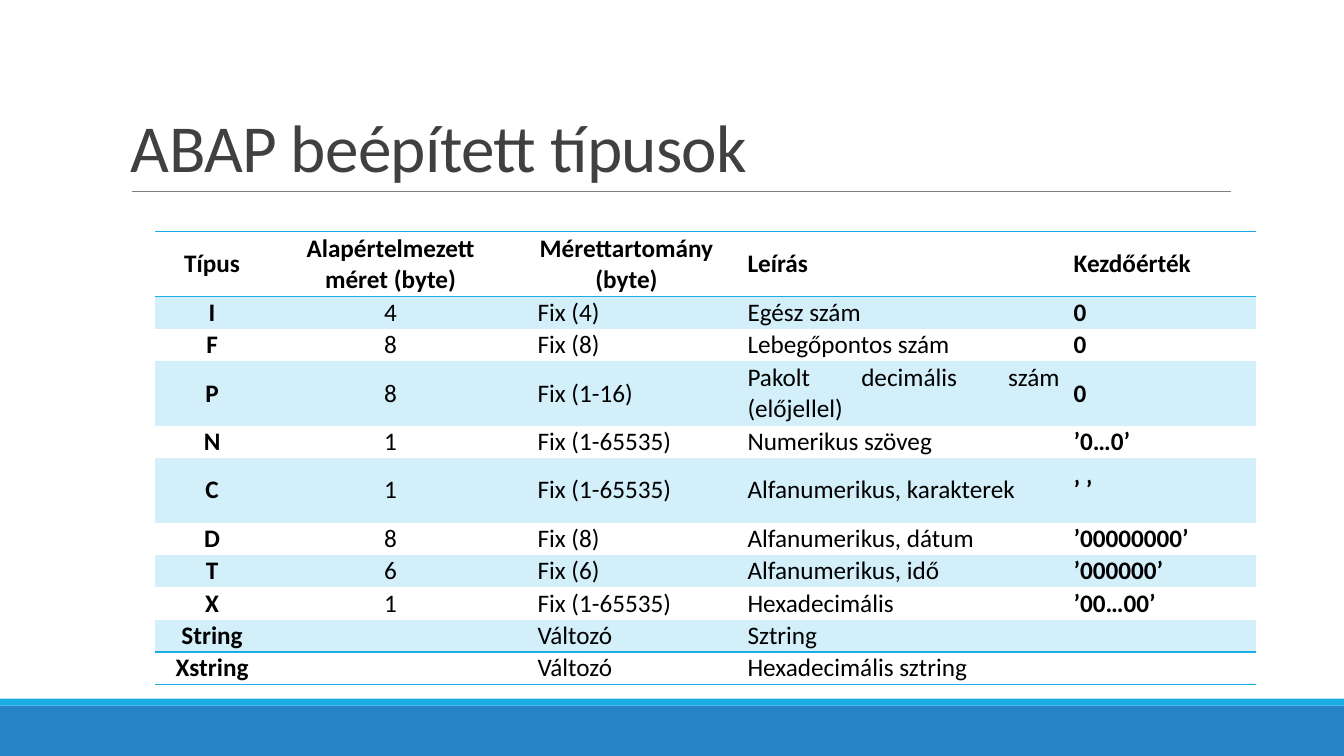
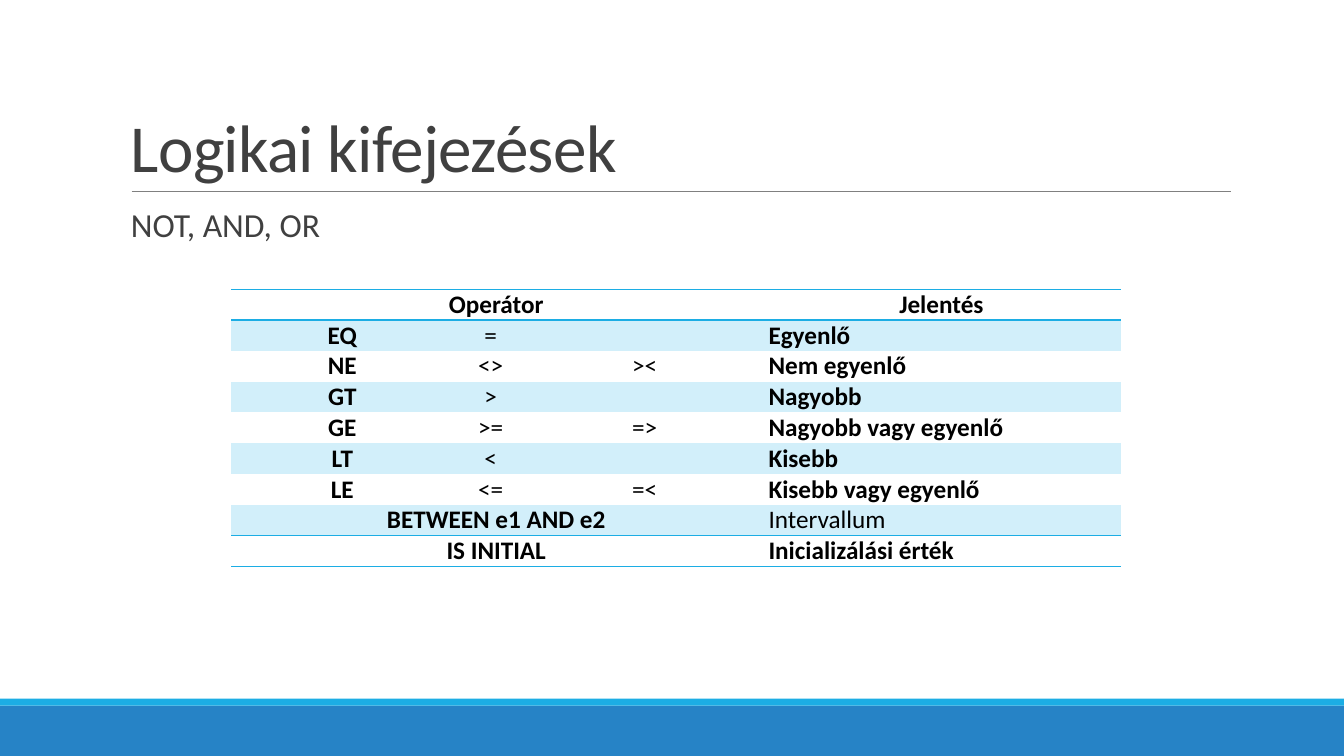
"""Builds two slides on ABAP built-in types and logical expressions."""
from lxml import etree
from pptx import Presentation
from pptx.dml.color import RGBColor
from pptx.enum import shapes, text
from pptx.oxml import ns
from pptx.util import Pt

CYAN = RGBColor(0x1C, 0xAD, 0xE4)
BLUE = RGBColor(0x26, 0x83, 0xC6)
PALE = RGBColor(0xD2, 0xEF, 0xFA)
GRAY = RGBColor(0x80, 0x80, 0x80)
DARK = RGBColor(0x40, 0x40, 0x40)
BLACK = RGBColor(0, 0, 0)
FONT = "Calibri"
WIDTH, HEIGHT = 960, 540
CENTER, JUSTIFY, LEFT = text.PP_ALIGN.CENTER, text.PP_ALIGN.JUSTIFY, text.PP_ALIGN.LEFT

BANDS = [(504, 36, BLUE), (499, 5, CYAN)]

TYPES = {
    "left": 111, "top": 165.6, "unit": 23.1,
    "widths": [81, 174, 163, 233, 135],
    "units": [2, 1, 1, 2, 1, 2, 1, 1, 1, 1, 1],
    "header_aligns": [CENTER, CENTER, CENTER, JUSTIFY, JUSTIFY],
    "columns": [
        {"align": CENTER, "bold": True}, {"align": CENTER}, {"align": LEFT, "indent": 13},
        {"align": JUSTIFY}, {"align": JUSTIFY, "bold": True},
    ],
    "rows": [
        ("Típus", "Alapértelmezett méret (byte)", "Mérettartomány\n(byte)", "Leírás", "Kezdőérték"),
        ("I", "4", "Fix (4)", "Egész szám", "0"),
        ("F", "8", "Fix (8)", "Lebegőpontos szám", "0"),
        ("P", "8", "Fix (1-16)", "Pakolt decimális szám (előjellel)", "0"),
        ("N", "1", "Fix (1-65535)", "Numerikus szöveg", "’0…0’"),
        ("C", "1", "Fix (1-65535)", "Alfanumerikus, karakterek", "’ ’"),
        ("D", "8", "Fix (8)", "Alfanumerikus, dátum", "’00000000’"),
        ("T", "6", "Fix (6)", "Alfanumerikus, idő", "’000000’"),
        ("X", "1", "Fix (1-65535)", "Hexadecimális", "’00…00’"),
        ("String", "", "Változó", "Sztring", ""),
        ("Xstring", "", "Változó", "Hexadecimális sztring", ""),
    ],
}

OPERATORS = {
    "left": 165, "top": 206.6, "unit": 22,
    "widths": [159, 53, 167, 257],
    "units": [1] * 9,
    "header_aligns": [CENTER] * 4,
    "columns": [
        {"align": CENTER, "bold": True}, {"align": CENTER}, {"align": CENTER},
        {"align": JUSTIFY, "bold": True},
    ],
    "plain": {"Intervallum"},
    "rows": [
        ("Operátor", None, None, "Jelentés"),
        ("EQ", "=", "", "Egyenlő"),
        ("NE", "<>", "><", "Nem egyenlő"),
        ("GT", ">", "", "Nagyobb"),
        ("GE", ">=", "=>", "Nagyobb vagy egyenlő"),
        ("LT", "<", "", "Kisebb"),
        ("LE", "<=", "=<", "Kisebb vagy egyenlő"),
        ("BETWEEN e1 AND e2", None, None, "Intervallum"),
        ("IS INITIAL", None, None, "Inicializálási érték"),
    ],
}

SLIDES = [
    {"title": "ABAP beépített típusok", "table": TYPES},
    {"title": "Logikai kifejezések", "body": "NOT, AND, OR", "table": OPERATORS},
]


def write(frame, content, size=18, color=BLACK, bold=False, align=LEFT,
          indent=0, line_spacing=None, tracking=0):
    """Fill a text frame with one paragraph per line."""
    frame.word_wrap = True
    for index, line in enumerate(content.split("\n")):
        paragraph = frame.add_paragraph() if index else frame.paragraphs[0]
        paragraph.alignment = align
        if line_spacing:
            paragraph.line_spacing = line_spacing
        if indent:
            paragraph._p.get_or_add_pPr().set("marL", str(Pt(indent)))
        run = paragraph.add_run()
        run.text = line
        font = run.font
        font.name, font.size, font.bold = FONT, Pt(size), bold
        font.color.rgb = color
        if tracking:
            run._r.get_or_add_rPr().set("spc", str(int(tracking * 100)))


def add_text(slide, content, top, height, anchor, **style):
    """Add a text box across the content column."""
    frame = slide.shapes.add_textbox(Pt(86.4), Pt(top), Pt(792), Pt(height)).text_frame
    frame.vertical_anchor = anchor
    write(frame, content, color=DARK, **style)


def add_frame(slide, title):
    """Add the bands, rule and title that every slide has."""
    for top, height, color in BANDS:
        band = slide.shapes.add_shape(
            shapes.MSO_SHAPE.RECTANGLE, 0, Pt(top), Pt(WIDTH), Pt(height))
        band.shadow.inherit = False
        band.fill.solid()
        band.fill.fore_color.rgb = color
        band.line.fill.background()
    rule = slide.shapes.add_connector(
        shapes.MSO_CONNECTOR.STRAIGHT, Pt(94), Pt(136.8), Pt(879), Pt(136.8))
    rule.line.color.rgb, rule.line.width = GRAY, Pt(0.5)
    etree.SubElement(rule._element.spPr, ns.qn("a:effectLst"))
    add_text(slide, title, 22.3, 114.5, text.MSO_ANCHOR.BOTTOM,
             size=48, line_spacing=0.85, tracking=-0.5)


def set_borders(cell, top, bottom):
    """Draw the chosen horizontal cell borders and clear the other sides."""
    properties = cell._tc.get_or_add_tcPr()
    for side, visible in (("L", False), ("R", False), ("T", top), ("B", bottom)):
        line = etree.SubElement(properties, ns.qn("a:ln" + side), w=str(Pt(1)))
        if visible:
            fill = etree.SubElement(line, ns.qn("a:solidFill"))
            etree.SubElement(fill, ns.qn("a:srgbClr"), val=str(CYAN))
        else:
            etree.SubElement(line, ns.qn("a:noFill"))


def add_grid(slide, data):
    """Add a banded table; None continues the cell on its left."""
    rows, widths = data["rows"], data["widths"]
    heights = [units * data["unit"] for units in data["units"]]
    table = slide.shapes.add_table(
        len(rows), len(widths), Pt(data["left"]), Pt(data["top"]),
        Pt(sum(widths)), Pt(sum(heights))).table
    table.first_row = table.horz_banding = False
    for column, width in zip(table.columns, widths):
        column.width = Pt(width)
    ruled_edges = {0, 1, len(rows) - 1, len(rows)}
    for row_index, values in enumerate(rows):
        table.rows[row_index].height = Pt(heights[row_index])
        for column_index, value in enumerate(values):
            cell = table.cell(row_index, column_index)
            cell.margin_left = cell.margin_right = Pt(5)
            cell.margin_top = cell.margin_bottom = 0
            cell.vertical_anchor = text.MSO_ANCHOR.MIDDLE
            set_borders(cell, row_index in ruled_edges, row_index + 1 in ruled_edges)
            if row_index % 2:
                cell.fill.solid()
                cell.fill.fore_color.rgb = PALE
            else:
                cell.fill.background()
            if value:
                style = dict(data["columns"][column_index])
                if row_index == 0:
                    style = {"align": data["header_aligns"][column_index], "bold": True}
                elif value in data.get("plain", ()):
                    style["bold"] = False
                write(cell.text_frame, value, **style)
        if None in values:
            last = len(values) - 1 - values[::-1].index(None)
            table.cell(row_index, values.index(None) - 1).merge(table.cell(row_index, last))


def main():
    """Build and save the presentation."""
    presentation = Presentation()
    presentation.slide_width, presentation.slide_height = Pt(WIDTH), Pt(HEIGHT)
    for content in SLIDES:
        slide = presentation.slides.add_slide(presentation.slide_layouts[6])
        add_frame(slide, content["title"])
        if "body" in content:
            add_text(slide, content["body"], 145.4, 40, text.MSO_ANCHOR.TOP,
                     size=24, line_spacing=0.9)
        add_grid(slide, content["table"])
    presentation.save("out.pptx")


if __name__ == "__main__":
    main()
